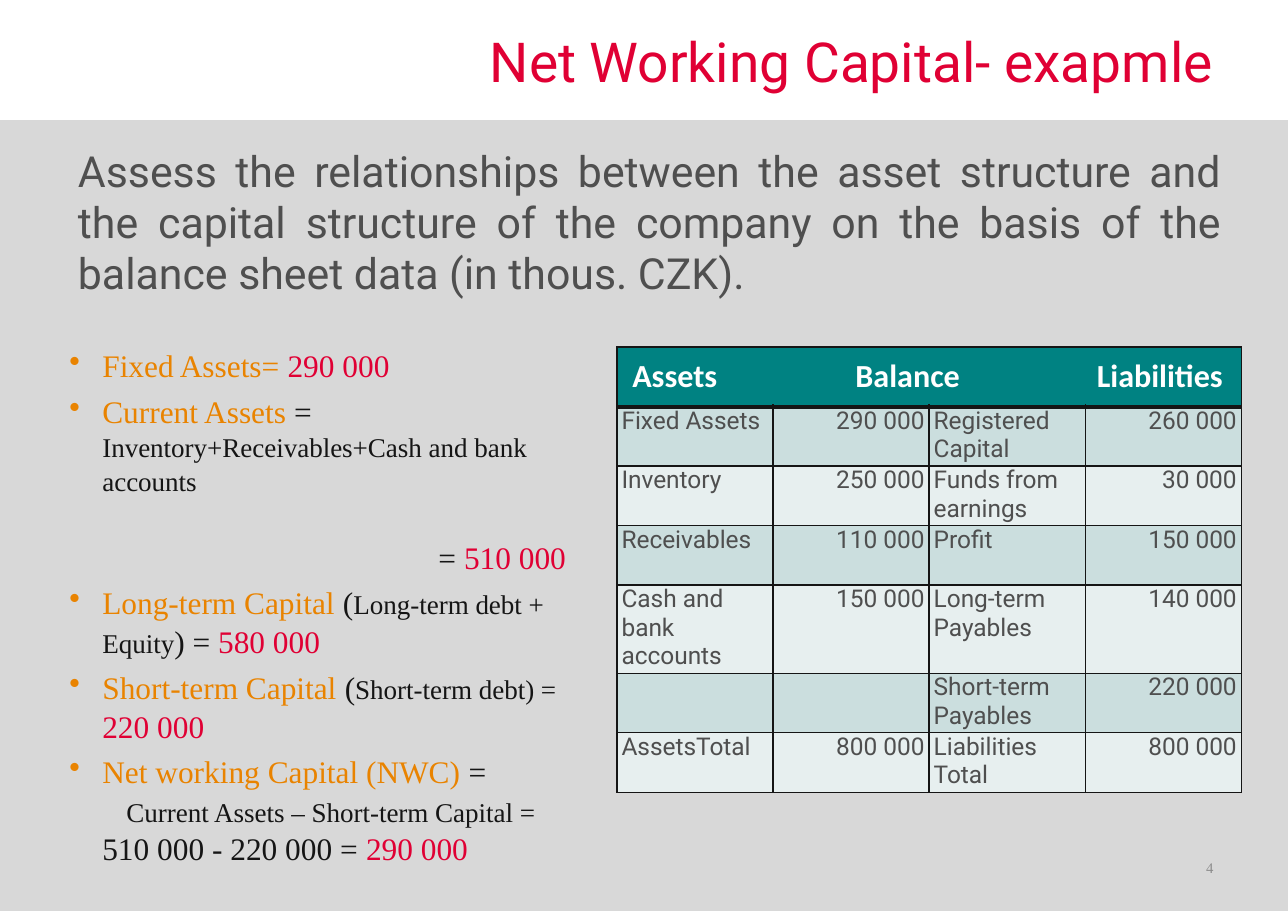
from dataclasses import dataclass

from lxml import etree
from pptx import Presentation
from pptx.dml.color import RGBColor
from pptx.enum import shapes, text
from pptx.oxml import ns
from pptx.util import Pt


@dataclass(frozen=True)
class Theme:
    red: str = "E00034"
    orange: str = "E98300"
    ink: str = "151515"
    grey: str = "4F4F4F"
    pale: str = "8C8C8C"
    white: str = "FFFFFF"
    panel: str = "D8D8D8"
    teal: str = "008282"
    bands: tuple = ("CBDEDE", "E7EFEF")
    sans: str = "Roboto"
    serif: str = "Times New Roman"
    header_font: str = "Calibri"
    title: float = 36
    task: float = 28
    header: float = 21
    body: float = 20.5
    detail: float = 17.7
    cell: float = 16
    number: float = 9.6


T = Theme()
LEFT, RIGHT = text.PP_ALIGN.LEFT, text.PP_ALIGN.RIGHT
INDENT = 21.6

TERM = (T.body, T.orange)
RESULT = (T.body, T.red)
PLAIN = (T.body, T.ink)
DETAIL = (T.detail, T.ink)

# Each line: runs, bulleted, left margin, space before, alignment
CALCULATIONS = [
    ([("Fixed Assets= ", TERM), ("290 000", RESULT)], True, INDENT, 0, LEFT),
    ([("Current Assets", TERM), (" = ", PLAIN),
      ("Inventory+Receivables+Cash and bank accounts", DETAIL)],
     True, INDENT, 4, LEFT),
    ([("= ", PLAIN), ("510 000", RESULT)], False, INDENT, 26, RIGHT),
    ([("Long-term Capital ", TERM), ("(", PLAIN),
      ("Long-term debt + Equity", DETAIL), (") = ", PLAIN),
      ("580 000", RESULT)], True, INDENT, 4, LEFT),
    ([("Short-term Capital ", TERM), ("(", PLAIN),
      ("Short-term debt) = ", DETAIL), ("220 000", RESULT)],
     True, INDENT, 4, LEFT),
    ([("Net working Capital (NWC) ", TERM), ("=", PLAIN)],
     True, INDENT, 4, LEFT),
    ([("Current Assets – Short-term Capital =", DETAIL)],
     False, 37.4, 3, LEFT),
    ([("510 000 - 220 000 = ", PLAIN), ("290 000", RESULT)],
     False, INDENT, 0, LEFT),
]

BALANCE = [
    ("Fixed Assets", "290 000", "Registered Capital", "260 000"),
    ("Inventory", "250 000", "Funds from earnings", "30 000"),
    ("Receivables", "110 000", "Profit", "150 000"),
    ("Cash and bank accounts", "150 000", "Long-term Payables", "140 000"),
    ("", "", "Short-term Payables", "220 000"),
    ("AssetsTotal", "800 000", "Liabilities Total", "800 000"),
]


def rgb(color):
    return RGBColor.from_string(color)


def style(r, size, color, font, bold=False):
    r.font.size, r.font.name, r.font.bold = Pt(size), font, bold
    r.font.color.rgb = rgb(color)


def add_box(s, left, top, width, height):
    tf = s.shapes.add_textbox(Pt(left), Pt(top), Pt(width), Pt(height)).text_frame
    tf.word_wrap = True
    return tf


def add_text(s, box, words, size, color, font, align):
    tf = add_box(s, *box)
    tf.text = words
    p = tf.paragraphs[0]
    p.alignment = align
    style(p.runs[0], size, color, font)
    return tf


def add_panel(s):
    sp = s.shapes.add_shape(shapes.MSO_SHAPE.RECTANGLE,
                            0, Pt(78.5), Pt(841.7), Pt(516.9))
    sp.shadow.inherit = False
    sp.fill.solid()
    sp.fill.fore_color.rgb = rgb(T.panel)
    sp.line.fill.background()


def add_calculations(s):
    tf = add_box(s, 38.2, 222, 352.8, 303)
    for i, (runs, bulleted, margin, before, align) in enumerate(CALCULATIONS):
        p = tf.add_paragraph() if i else tf.paragraphs[0]
        p.alignment, p.line_spacing = align, 1.04
        if before:
            p.space_before = Pt(before)
        pPr = p._p.get_or_add_pPr()
        pPr.set("marL", str(Pt(margin)))
        pPr.set("indent", str(Pt(-INDENT if bulleted else 0)))
        if align == RIGHT:
            pPr.set("marR", str(Pt(14)))
        if bulleted:
            etree.SubElement(pPr, ns.qn("a:buChar"), char="•")
        else:
            etree.SubElement(pPr, ns.qn("a:buNone"))
        for words, (size, color) in runs:
            r = p.add_run()
            r.text = words
            style(r, size, color, T.serif)


def format_cell(cell, fill, insets, top=1, bottom=1):
    """Fill the cell, set its insets and rule its four edges."""
    cell.fill.solid()
    cell.fill.fore_color.rgb = rgb(fill)
    (cell.margin_left, cell.margin_top,
     cell.margin_right, cell.margin_bottom) = map(Pt, insets)
    tcPr = cell._tc.get_or_add_tcPr()
    edges = (("lnL", 1), ("lnR", 1), ("lnT", top), ("lnB", bottom))
    for i, (edge, width) in enumerate(edges):
        ln = etree.Element(ns.qn(f"a:{edge}"), w=str(Pt(width)))
        solid = etree.SubElement(ln, ns.qn("a:solidFill"))
        etree.SubElement(solid, ns.qn("a:srgbClr"), val=T.ink)
        tcPr.insert(i, ln)


def add_header(table):
    """Span the header over the table, with its words set on tab stops."""
    columns = len(table.columns)
    for c in range(columns):
        format_cell(table.cell(0, c), T.teal, (10, 3, 6, 3), bottom=3)
    cell = table.cell(0, 0)
    cell.merge(table.cell(0, columns - 1))
    cell.vertical_anchor = text.MSO_ANCHOR.MIDDLE
    p = cell.text_frame.paragraphs[0]
    p.text = "Assets\tBalance\tLiabilities"
    tabs = etree.SubElement(p._p.get_or_add_pPr(), ns.qn("a:tabLst"))
    for pos, algn in ((180, "ctr"), (386, "r")):
        etree.SubElement(tabs, ns.qn("a:tab"), pos=str(Pt(pos)), algn=algn)
    for r in p.runs:
        style(r, T.header, T.white, T.header_font, bold=True)


def add_balance(s):
    rows, columns = len(BALANCE) + 1, len(BALANCE[0])
    table = s.shapes.add_table(rows, columns, Pt(403.2), Pt(226.8),
                               Pt(408), Pt(rows * 38.9)).table
    add_header(table)
    for i, record in enumerate(BALANCE):
        for c, words in enumerate(record):
            cell = table.cell(i + 1, c)
            format_cell(cell, T.bands[i % 2], (3, 0, 3, 0), top=1 if i else 3)
            cell.text_frame.text = words
            p = cell.text_frame.paragraphs[0]
            p.alignment = RIGHT if c % 2 else LEFT
            for r in p.runs:
                style(r, T.cell, T.grey, T.sans)


def main():
    prs = Presentation()
    prs.slide_width, prs.slide_height = Pt(841.7), Pt(595.4)
    s = prs.slides.add_slide(prs.slide_layouts[6])
    add_panel(s)
    add_calculations(s)
    add_balance(s)
    number = add_text(s, (603.4, 551.5, 196.6, 31.7), "4",
                      T.number, T.pale, T.serif, RIGHT)
    number.vertical_anchor = text.MSO_ANCHOR.MIDDLE
    add_text(s, (43.9, 90.7, 761, 108.7),
             "Assess the relationships between the asset structure and the "
             "capital structure of the company on the basis of the balance "
             "sheet data (in thous. CZK).",
             T.task, T.grey, T.sans, text.PP_ALIGN.JUSTIFY)
    add_text(s, (215.3, 14.4, 584.6, 51.8), "Net Working Capital- exapmle",
             T.title, T.red, T.sans, RIGHT)
    prs.save("out.pptx")


if __name__ == "__main__":
    main()
